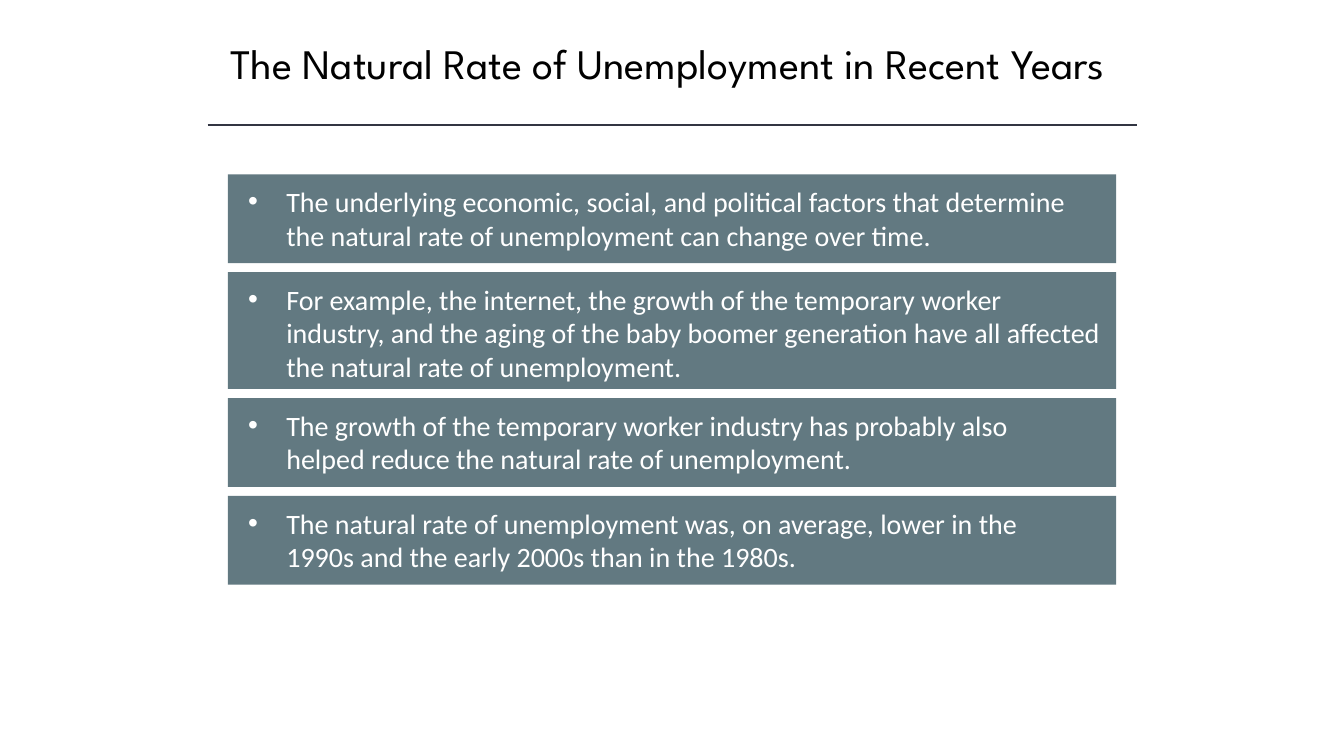
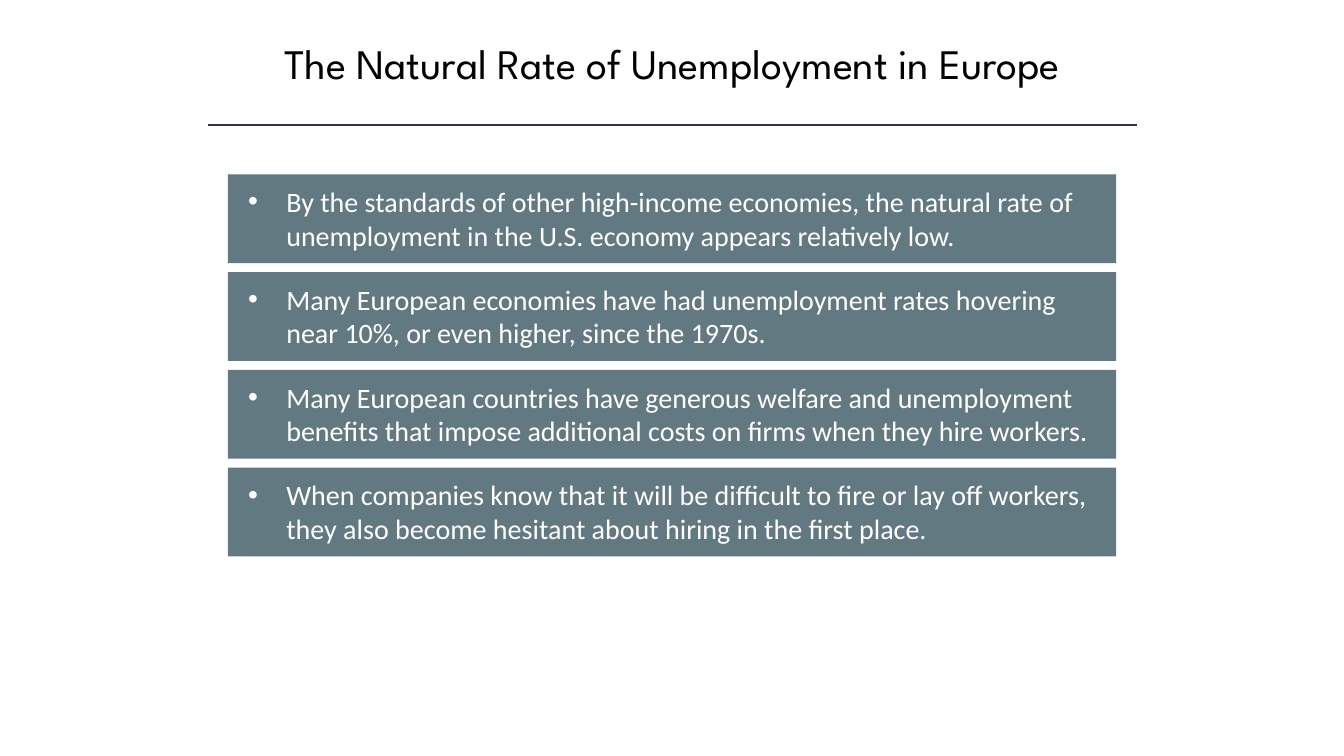
from pptx import Presentation
from pptx.dml.color import RGBColor
from pptx.enum.shapes import MSO_CONNECTOR, MSO_SHAPE
from pptx.enum.text import MSO_ANCHOR, MSO_AUTO_SIZE, PP_ALIGN
from pptx.oxml.ns import qn
from pptx.util import Inches, Pt
from lxml.etree import SubElement

# Shared style
COLORS = {"title": "000000", "rule": "323542", "band": "627981", "text": "FFFFFF"}
TITLE_FONT, BODY_FONT = "League Spartan", "Calibri"
BAND_LEFT, BAND_TOP, BAND_WIDTH, BAND_GAP = 2.26, 1.73, 8.81, 0.09
# Lines of text in a band: (band height, right inset)
BAND_SIZES = {2: (0.88, 0.27), 3: (1.16, 0.1)}

# Title, title left, title width, and statements with their line counts
SLIDES = [
    ("The Natural Rate of Unemployment in Recent Years", 1.35, 10.55, [
        ("The underlying economic, social, and political factors that determine "
         "the natural rate of unemployment can change over time.", 2),
        ("For example, the internet, the growth of the temporary worker industry, "
         "and the aging of the baby boomer generation have all affected the "
         "natural rate of unemployment.", 3),
        ("The growth of the temporary worker industry has probably also "
         "helped reduce the natural rate of unemployment.", 2),
        ("The natural rate of unemployment was, on average, lower in the "
         "1990s and the early 2000s than in the 1980s.", 2),
    ]),
    ("The Natural Rate of Unemployment in Europe", 1.67, 10, [
        ("By the standards of other high-income economies, the natural rate of "
         "unemployment in the U.S. economy appears relatively low.", 2),
        ("Many European economies have had unemployment rates hovering "
         "near 10%, or even higher, since the 1970s.", 2),
        ("Many European countries have generous welfare and unemployment "
         "benefits that impose additional costs on firms when they hire workers.", 2),
        ("When companies know that it will be difficult to fire or lay off workers, "
         "they also become hesitant about hiring in the first place.", 2),
    ]),
]


def color(name):
    return RGBColor.from_string(COLORS[name])


def style_text(paragraph, font_name, size, color_name):
    for span in paragraph.runs:
        span.font.name = font_name
        span.font.size = Pt(size)
        span.font.color.rgb = color(color_name)


def set_title(page, text, left, width):
    title = page.shapes.title
    title.left, title.top = Inches(left), Inches(0.32)
    title.width, title.height = Inches(width), Inches(0.61)
    frame = title.text_frame
    frame.text = text
    frame.word_wrap = True
    frame.auto_size = MSO_AUTO_SIZE.NONE
    frame.vertical_anchor = MSO_ANCHOR.TOP
    paragraph = frame.paragraphs[0]
    paragraph.alignment = PP_ALIGN.CENTER
    style_text(paragraph, TITLE_FONT, 30, "title")


def add_rule(page):
    rule = page.shapes.add_connector(
        MSO_CONNECTOR.STRAIGHT, Inches(2.06), Inches(1.24), Inches(11.28), Inches(1.24))
    rule.line.color.rgb = color("rule")
    rule.line.width = Pt(1)
    SubElement(rule.element.spPr, qn("a:effectLst"))


def add_bullet(paragraph, indent):
    properties = paragraph._p.get_or_add_pPr()
    properties.set("marL", str(Inches(indent)))
    properties.set("indent", str(-Inches(indent)))
    SubElement(properties, qn("a:buFont")).set("typeface", "Arial")
    SubElement(properties, qn("a:buChar")).set("char", "•")


def add_band(page, text, top, height, right_inset):
    band = page.shapes.add_shape(
        MSO_SHAPE.RECTANGLE, Inches(BAND_LEFT), Inches(top),
        Inches(BAND_WIDTH), Inches(height))
    band.shadow.inherit = False
    band.fill.solid()
    band.fill.fore_color.rgb = color("band")
    band.line.fill.background()
    frame = band.text_frame
    frame.text = text
    frame.word_wrap = True
    frame.vertical_anchor = MSO_ANCHOR.TOP
    frame.margin_left, frame.margin_right = Inches(0.2), Inches(right_inset)
    frame.margin_top, frame.margin_bottom = Inches(0.1), Inches(0)
    paragraph = frame.paragraphs[0]
    paragraph.alignment = PP_ALIGN.LEFT
    add_bullet(paragraph, 0.38)
    style_text(paragraph, BODY_FONT, 20, "text")


def add_bands(page, statements):
    top = BAND_TOP
    for text, line_count in statements:
        height, right_inset = BAND_SIZES[line_count]
        add_band(page, text, top, height, right_inset)
        top += height + BAND_GAP


def main():
    deck = Presentation()
    deck.slide_width, deck.slide_height = Inches(13.33), Inches(7.5)
    title_only = deck.slide_layouts.get_by_name("Title Only")
    for title, left, width, statements in SLIDES:
        page = deck.slides.add_slide(title_only)
        set_title(page, title, left, width)
        add_rule(page)
        add_bands(page, statements)
    deck.save("out.pptx")


if __name__ == "__main__":
    main()
